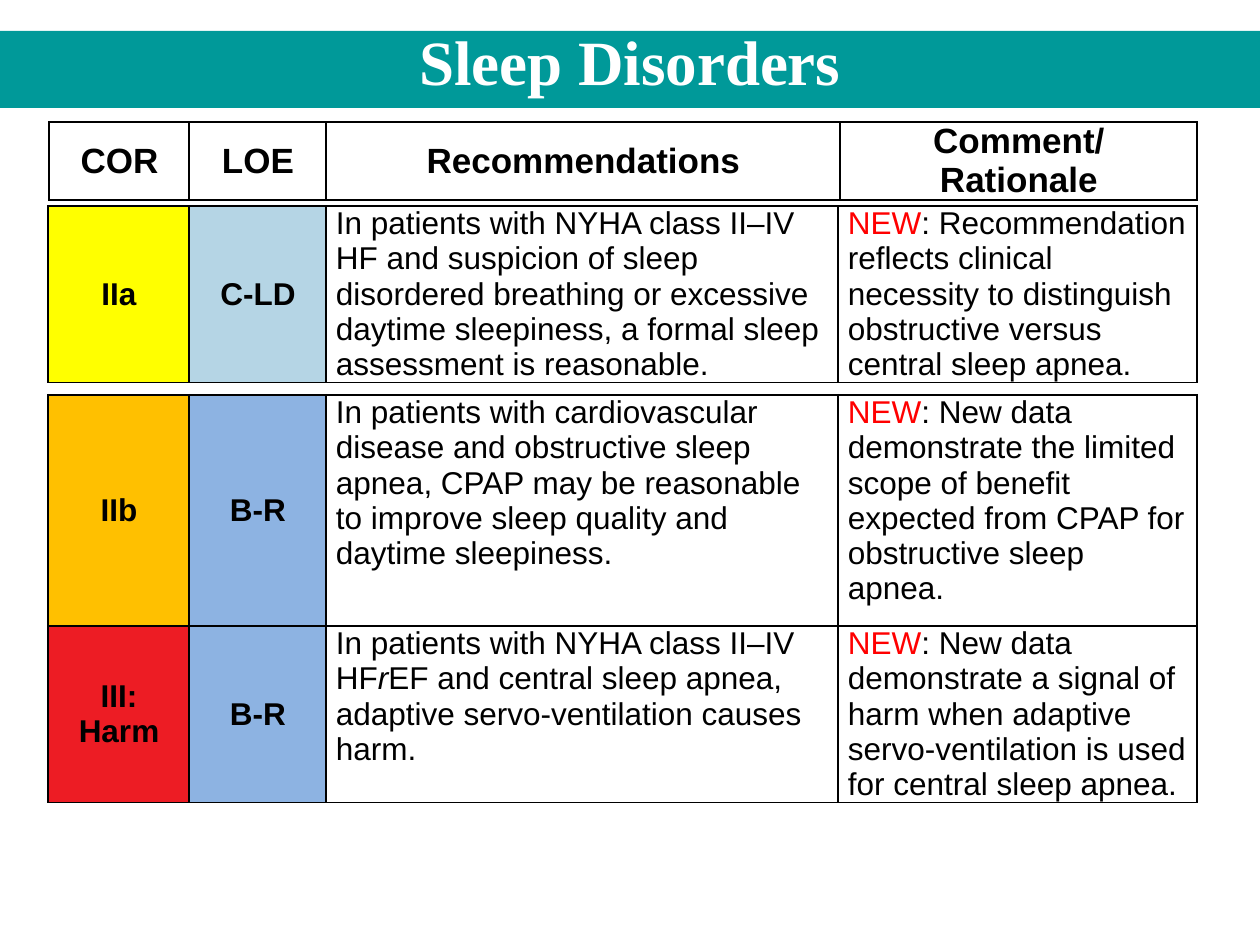
import pptx
import pptx.util
import pptx.dml.color
import pptx.enum.shapes
import pptx.enum.text
import pptx.oxml
import pptx.oxml.ns

PX = 914400 / 126
ALIGN = pptx.enum.text.PP_ALIGN
ANCHOR = pptx.enum.text.MSO_ANCHOR

FRAME_SIDE = 413
HEADER_COLS = [140, 137, 514, 357]
BODY_COLS = [141, 137, 512, 359]

HEADINGS = ["COR", "LOE", "Recommendations", "Comment/\nRationale"]

# top, least row height, top border in points, (class, fill), (evidence, fill),
# recommendation runs, rationale
RECOMMENDATIONS = [
    (206, 54, 1, ("IIa", "FFFF00"), ("C-LD", "B5D5E5"),
     [("In patients with NYHA class II–IV HF and suspicion of sleep disordered "
       "breathing or excessive daytime sleepiness, a formal sleep assessment "
       "is reasonable.", {})],
     "Recommendation reflects clinical necessity to distinguish obstructive "
     "versus central sleep apnea."),
    (395, 231, 1.5, ("IIb", "FFC000"), ("B-R", "8DB3E2"),
     [("In patients with cardiovascular disease and obstructive sleep apnea, "
       "CPAP may be reasonable to improve sleep quality and daytime "
       "sleepiness.", {})],
     "New data demonstrate the limited scope of benefit expected from CPAP "
     "for obstructive sleep apnea."),
    (626, 53, 1.5, ("III: Harm", "ED1C24"), ("B-R", "8DB3E2"),
     [("In patients with NYHA class II–IV HF", {}), ("r", {"italic": True}),
      ("EF and central sleep apnea, adaptive servo-ventilation causes harm.", {})],
     "New data demonstrate a signal of harm when adaptive servo-ventilation "
     "is used for central sleep apnea."),
]


def px(n):
    return pptx.util.Emu(round(n * PX))


def rgb(value):
    return pptx.dml.color.RGBColor.from_string(value)


def set_attrs(obj, values):
    for name, value in values.items():
        setattr(obj, name, value)


def add_run(p, text, size, color="000000", font="Arial", **styles):
    r = p.add_run()
    r.text = text
    set_attrs(r.font, {"name": font, "size": pptx.util.Pt(size), **styles})
    r.font.color.rgb = rgb(color)


def add_banner(s, text):
    sp = s.shapes.add_shape(pptx.enum.shapes.MSO_SHAPE.RECTANGLE,
                            px(0), px(31), px(1260), px(77))
    sp.shadow.inherit = False
    sp.fill.solid()
    sp.fill.fore_color.rgb = rgb("009999")
    sp.line.fill.background()
    tf = sp.text_frame
    set_attrs(tf, {"word_wrap": True, "vertical_anchor": ANCHOR.TOP})
    p = tf.paragraphs[0]
    set_attrs(p, {"alignment": ALIGN.CENTER, "line_spacing": 0.8})
    add_run(p, text, 36, "FFFFFF", "Times New Roman", bold=True)


def set_borders(cell, top):
    """Draw black lines on all four sides, ahead of the cell fill."""
    tc_pr = cell._tc.get_or_add_tcPr()
    widths = {"lnL": 1, "lnR": 1, "lnT": top, "lnB": 1}
    for i, (side, width) in enumerate(widths.items()):
        tc_pr.insert(i, pptx.oxml.parse_xml(
            f'<a:{side} {pptx.oxml.ns.nsdecls("a")} w="{pptx.util.Pt(width)}">'
            '<a:solidFill><a:srgbClr val="000000"/></a:solidFill>'
            f'</a:{side}>'))


def add_row_table(s, left, top, height, cols, top_border=1):
    """Add a one-row table, whose row grows with its text; return its cells."""
    frame = s.shapes.add_table(1, len(cols), px(left), px(top),
                               px(sum(cols)), px(height))
    table = frame.table
    set_attrs(table, {"first_row": False, "horz_banding": False})
    for column, width in zip(table.columns, cols):
        column.width = px(width)
    set_attrs(frame, {"width": px(FRAME_SIDE), "height": px(FRAME_SIDE)})
    cells = list(table.rows[0].cells)
    for cell in cells:
        set_attrs(cell, {"margin_left": px(10), "margin_right": px(9),
                         "margin_top": 0, "margin_bottom": 0})
        cell.fill.background()
        set_borders(cell, top_border)
    return cells


def fill_label(cell, text, size, fill=None):
    """Bold centred text, one paragraph per line."""
    cell.vertical_anchor = ANCHOR.MIDDLE
    if fill:
        cell.fill.solid()
        cell.fill.fore_color.rgb = rgb(fill)
    tf = cell.text_frame
    for i, line in enumerate(text.split("\n")):
        p = tf.add_paragraph() if i else tf.paragraphs[0]
        p.alignment = ALIGN.CENTER
        add_run(p, line, size, bold=True)


def fill_body(cell, runs):
    p = cell.text_frame.paragraphs[0]
    p.alignment = ALIGN.LEFT
    for text, styles in runs:
        add_run(p, text, 18, **{"bold": False, **styles})


def main():
    prs = pptx.Presentation()
    set_attrs(prs, {"slide_width": px(1260), "slide_height": px(945)})
    s = prs.slides.add_slide(prs.slide_layouts[6])

    add_banner(s, "Sleep Disorders")

    # Column headings
    for cell, text in zip(add_row_table(s, 49, 122, 35, HEADER_COLS), HEADINGS):
        fill_label(cell, text, 20)

    # One table per recommendation
    for top, height, border, cor, loe, advice, reason in RECOMMENDATIONS:
        cells = add_row_table(s, 48, top, height, BODY_COLS, border)
        for cell, (text, fill) in zip(cells, (cor, loe)):
            fill_label(cell, text, 18, fill)
        fill_body(cells[2], advice)
        fill_body(cells[3], [("NEW", {"color": "FF0000"}), (": " + reason, {})])

    prs.save("out.pptx")


if __name__ == "__main__":
    main()
